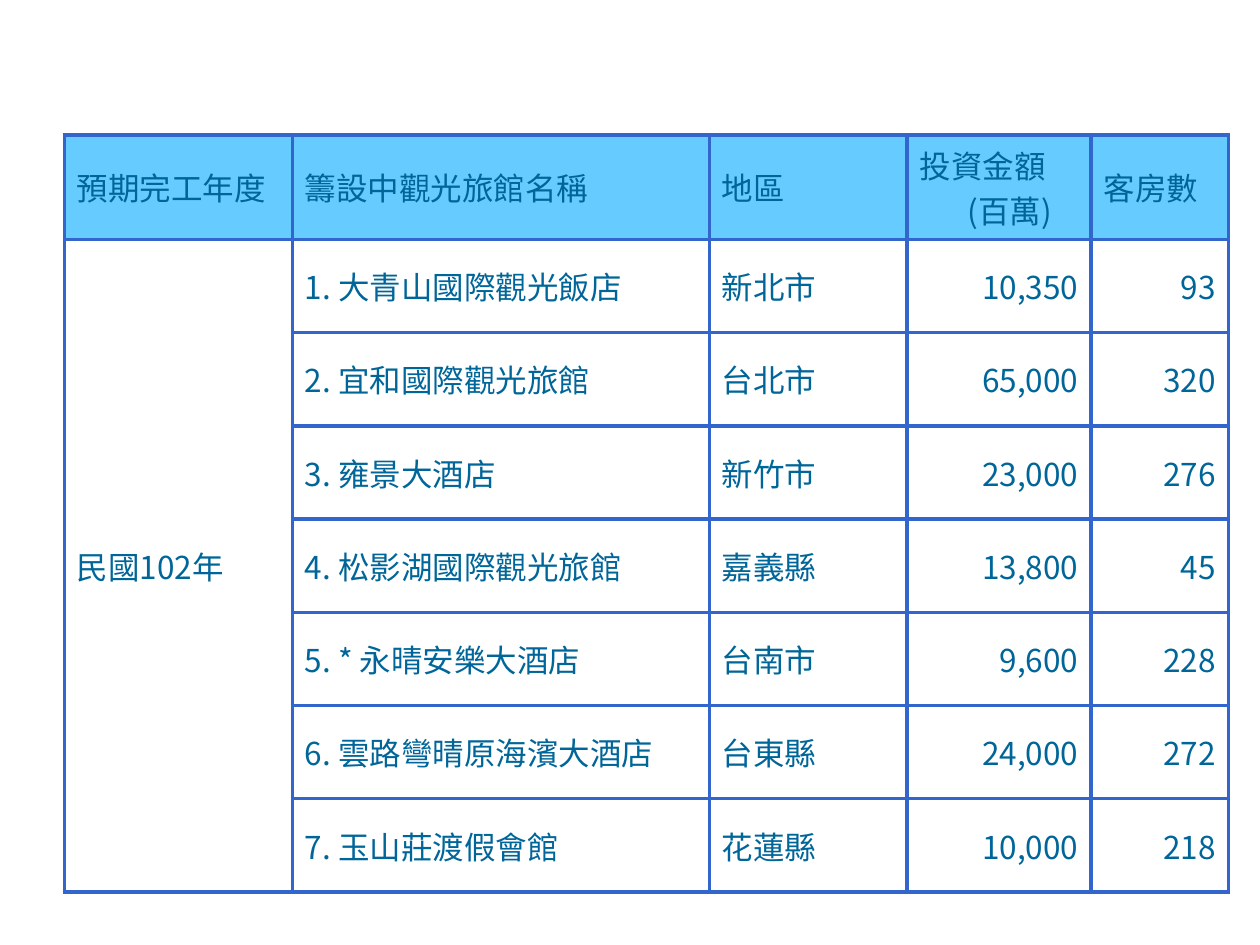
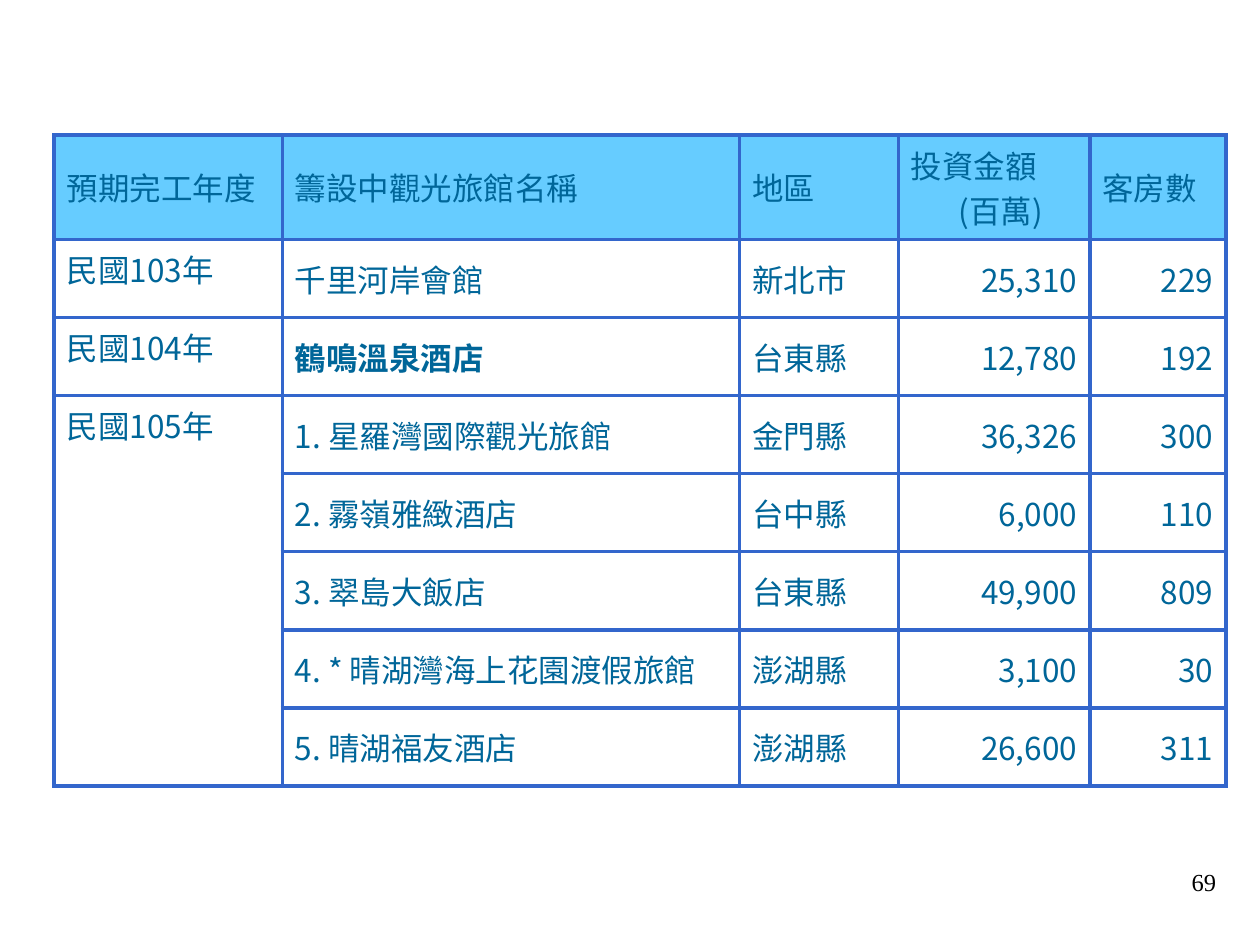
from lxml.etree import SubElement
from pptx import Presentation
from pptx.dml.color import RGBColor
from pptx.enum.text import MSO_ANCHOR as Anchor, PP_ALIGN as Align
from pptx.oxml.ns import qn
from pptx.util import Inches, Pt

COLORS = {"header": "66CCFF", "body": "FFFFFF", "grid": "3366CC",
          "text": "006699", "number": "000000"}
TABLE_FONT = "Noto Sans CJK JP"
NUMBER_FONT = "Times New Roman"
HEADINGS = ("預期完工年度", "籌設中觀光旅館名稱", "地區", "投資金額(百萬)", "客房數")
TABLE_TOP = 1.07
HEADER_HEIGHT = 0.83
HANGING = Inches(0.38)
FIRST_AMOUNT_COLUMN = 3

HOTELS_102 = {
    "民國102年": [
        ("1. 大青山國際觀光飯店", "新北市", "10,350", "93"),
        ("2. 宜和國際觀光旅館", "台北市", "65,000", "320"),
        ("3. 雍景大酒店", "新竹市", "23,000", "276"),
        ("4. 松影湖國際觀光旅館", "嘉義縣", "13,800", "45"),
        ("5. * 永晴安樂大酒店", "台南市", "9,600", "228"),
        ("6. 雲路彎晴原海濱大酒店", "台東縣", "24,000", "272"),
        ("7. 玉山莊渡假會館", "花蓮縣", "10,000", "218"),
    ],
}
HOTELS_103_TO_105 = {
    "民國103年": [("千里河岸會館", "新北市", "25,310", "229")],
    "民國104年": [("鶴鳴溫泉酒店", "台東縣", "12,780", "192")],
    "民國105年": [
        ("1. 星羅灣國際觀光旅館", "金門縣", "36,326", "300"),
        ("2. 霧嶺雅緻酒店", "台中縣", "6,000", "110"),
        ("3. 翠島大飯店", "台東縣", "49,900", "809"),
        ("4. * 晴湖灣海上花園渡假旅館", "澎湖縣", "3,100", "30"),
        ("5. 晴湖福友酒店", "澎湖縣", "26,600", "311"),
    ],
}
BOLD_HOTELS = {"鶴鳴溫泉酒店"}


def color(name):
    """Return a named colour as an RGBColor."""
    return RGBColor.from_string(COLORS[name])


def style_font(font, typeface, size, color_name):
    """Set typeface, size and colour of a font."""
    font.name, font.size = typeface, Pt(size)
    font.color.rgb = color(color_name)


def add_borders(cell):
    """Draw the grid line on all four sides of a cell."""
    properties = cell._tc.get_or_add_tcPr()
    for side in ("a:lnL", "a:lnR", "a:lnT", "a:lnB"):
        line = SubElement(properties, qn(side), w=str(Pt(2.25)))
        fill = SubElement(line, qn("a:solidFill"))
        SubElement(fill, qn("a:srgbClr"), val=COLORS["grid"])


def format_cell(cell, fill_name):
    """Give a cell its borders and fill."""
    add_borders(cell)
    cell.fill.solid()
    cell.fill.fore_color.rgb = color(fill_name)


def write_cell(cell, text, align=Align.LEFT, anchor=Anchor.MIDDLE):
    """Write one hanging paragraph into a cell."""
    cell.vertical_anchor = anchor
    para = cell.text_frame.paragraphs[0]
    span = para.add_run()
    span.text = text
    para.alignment = align
    indents = para._p.get_or_add_pPr()
    indents.set("marL", str(HANGING))
    indents.set("indent", str(-HANGING))
    style_font(span.font, TABLE_FONT, 18, "text")
    span.font.bold = text in BOLD_HOTELS
    SubElement(span.font._element, qn("a:ea"), typeface=TABLE_FONT)


def add_hotel_table(page, left, widths, row_height, hotels_by_year, year_anchor):
    """Add a table of planned hotels grouped by completion year."""
    row_count = 1 + sum(map(len, hotels_by_year.values()))
    height = HEADER_HEIGHT + row_height * (row_count - 1)
    table = page.shapes.add_table(
        row_count, len(HEADINGS), Inches(left), Inches(TABLE_TOP),
        Inches(sum(widths)), Inches(height)).table
    table.first_row = table.horz_banding = False
    for column, width in zip(table.columns, widths):
        column.width = Inches(width)
    for index, row in enumerate(table.rows):
        row.height = Inches(row_height if index else HEADER_HEIGHT)
        for cell in row.cells:
            format_cell(cell, "body" if index else "header")

    for column, heading in enumerate(HEADINGS):
        write_cell(table.cell(0, column), heading)
    first = 1
    for year, hotels in hotels_by_year.items():
        last = first + len(hotels) - 1
        if last > first:
            table.cell(first, 0).merge(table.cell(last, 0))
        write_cell(table.cell(first, 0), year, anchor=year_anchor)
        for row, hotel in enumerate(hotels, first):
            for column, text in enumerate(hotel, 1):
                align = Align.RIGHT if column >= FIRST_AMOUNT_COLUMN else Align.LEFT
                write_cell(table.cell(row, column), text, align)
        first = last + 1


def add_page_number(page, number):
    """Add the page number at the lower right."""
    box = page.shapes.add_textbox(Inches(7.67), Inches(6.83), Inches(2.08), Inches(0.5))
    box.text_frame.word_wrap = True
    para = box.text_frame.paragraphs[0]
    para.text = number
    para.alignment = Align.RIGHT
    style_font(para.font, NUMBER_FONT, 14, "number")


def main():
    """Build the two table pages and save the deck."""
    deck = Presentation()
    deck.slide_width, deck.slide_height = Inches(10), Inches(7.5)
    blank = deck.slide_layouts[6]

    page = deck.slides.add_slide(blank)
    add_hotel_table(page, 0.51, (1.81, 3.31, 1.57, 1.46, 1.09), 0.74,
                    HOTELS_102, Anchor.MIDDLE)

    page = deck.slides.add_slide(blank)
    add_page_number(page, "69")
    add_hotel_table(page, 0.43, (1.81, 3.63, 1.26, 1.52, 1.08), 0.62,
                    HOTELS_103_TO_105, Anchor.TOP)

    deck.save("out.pptx")


if __name__ == "__main__":
    main()
